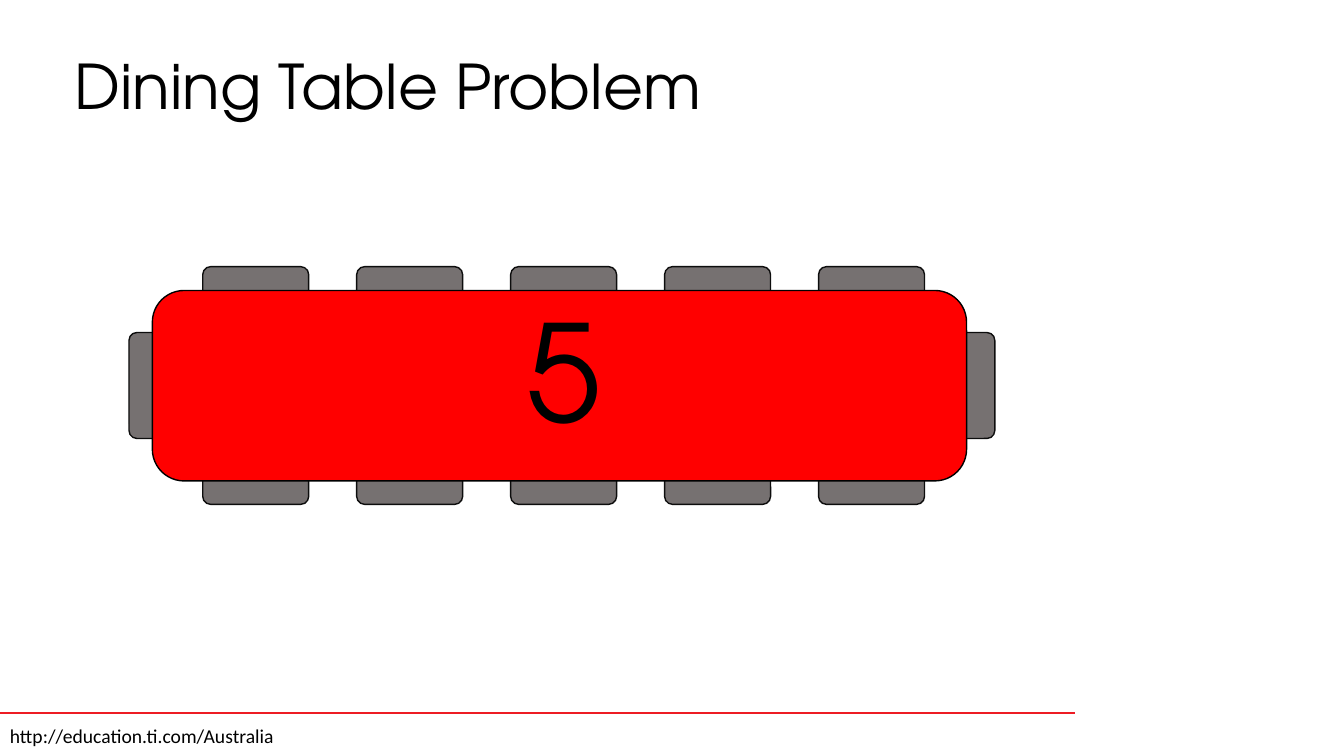
from dataclasses import dataclass

from lxml.etree import SubElement
from pptx import Presentation
from pptx.dml.color import RGBColor
from pptx.enum.shapes import MSO_CONNECTOR, MSO_SHAPE
from pptx.enum.text import MSO_ANCHOR as Anchor, MSO_AUTO_SIZE as AutoSize
from pptx.oxml.ns import qn
from pptx.slide import Slide
from pptx.util import Cm, Pt


@dataclass(frozen=True)
class Theme:
    display_font: str = "TeX Gyre Adventor"
    footer_font: str = "Calibri"
    title_size: float = 44
    number_size: float = 96
    footer_size: float = 14
    outline_width: float = 1
    rule_width: float = 1.5
    black: RGBColor = RGBColor(0x00, 0x00, 0x00)
    table_red: RGBColor = RGBColor(0xFF, 0x00, 0x00)
    chair_grey: RGBColor = RGBColor(0x76, 0x71, 0x71)
    chair_outline: RGBColor = RGBColor(0x0D, 0x0D, 0x0D)
    rule_red: RGBColor = RGBColor(0xED, 0x1C, 0x24)


THEME = Theme()


@dataclass(frozen=True)
class Box:
    """Position and size in centimetres."""
    left: float
    top: float
    width: float
    height: float

    def lengths(self) -> tuple[Cm, Cm, Cm, Cm]:
        return Cm(self.left), Cm(self.top), Cm(self.width), Cm(self.height)


@dataclass(frozen=True)
class Furniture:
    box: Box
    fill: RGBColor
    outline: RGBColor
    rotation: float = 0


@dataclass(frozen=True)
class Label:
    text: str
    box: Box
    font: str
    size: float
    anchor: Anchor = Anchor.TOP


CHAIR_WIDTH, CHAIR_HEIGHT = 2.67, 1.19
CHAIRS_PER_SIDE = 5
FIRST_CHAIR_LEFT, CHAIR_PITCH = 5.11, 3.88
CHAIR_ROW_TOPS = (6.72, 11.52)
END_CHAIR_LEFTS, END_CHAIR_TOP = (2.51, 23.14), 9.12
RULE_TOP, RULE_LENGTH = 17.96, 27.1

DINING_TABLE = Furniture(Box(3.84, 7.32, 20.52, 4.8), THEME.table_red, THEME.black)

LABELS = (
    Label("http://education.ti.com/Australia", Box(0, 18.11, 16.28, 0.86),
          THEME.footer_font, THEME.footer_size),
    Label("5", Box(13.03, 7.14, 2.67, 4.37), THEME.display_font, THEME.number_size),
    Label("Dining Table Problem", Box(1.63, 1.07, 24.84, 2.13),
          THEME.display_font, THEME.title_size, Anchor.MIDDLE),
)


def chair(left: float, top: float, rotation: float = 0) -> Furniture:
    return Furniture(Box(left, top, CHAIR_WIDTH, CHAIR_HEIGHT),
                     THEME.chair_grey, THEME.chair_outline, rotation)


def arrange_chairs() -> list[Furniture]:
    """Seat one chair at each end and a row along both long sides."""
    ends = [chair(left, END_CHAIR_TOP, 90) for left in END_CHAIR_LEFTS]
    rows = [chair(FIRST_CHAIR_LEFT + place * CHAIR_PITCH, top)
            for top in CHAIR_ROW_TOPS for place in range(CHAIRS_PER_SIDE)]
    return ends + rows


def draw_furniture(slide: Slide, item: Furniture) -> None:
    piece = slide.shapes.add_shape(MSO_SHAPE.ROUNDED_RECTANGLE, *item.box.lengths())
    piece.rotation = item.rotation
    piece.shadow.inherit = False
    piece.fill.solid()
    piece.fill.fore_color.rgb = item.fill
    piece.line.color.rgb = item.outline
    piece.line.width = Pt(THEME.outline_width)


def draw_label(slide: Slide, label: Label) -> None:
    frame = slide.shapes.add_textbox(*label.box.lengths()).text_frame
    frame_format = {"word_wrap": True, "auto_size": AutoSize.SHAPE_TO_FIT_TEXT,
                    "vertical_anchor": label.anchor}
    for attribute, value in frame_format.items():
        setattr(frame, attribute, value)
    run = frame.paragraphs[0].add_run()
    run.text = label.text
    for attribute, value in {"name": label.font, "size": Pt(label.size)}.items():
        setattr(run.font, attribute, value)
    run.font.color.rgb = THEME.black


def draw_footer_rule(slide: Slide) -> None:
    rule = slide.shapes.add_connector(
        MSO_CONNECTOR.STRAIGHT, Cm(0), Cm(RULE_TOP), Cm(RULE_LENGTH), Cm(RULE_TOP))
    rule.line.color.rgb = THEME.rule_red
    rule.line.width = Pt(THEME.rule_width)
    SubElement(rule.element.spPr, qn("a:effectLst"))


def main() -> None:
    deck = Presentation()
    deck.slide_width, deck.slide_height = Cm(33.87), Cm(19.05)
    slide = deck.slides.add_slide(deck.slide_layouts[6])
    draw_footer_rule(slide)
    for item in (*arrange_chairs(), DINING_TABLE):
        draw_furniture(slide, item)
    for label in LABELS:
        draw_label(slide, label)
    deck.save("out.pptx")


if __name__ == "__main__":
    main()
